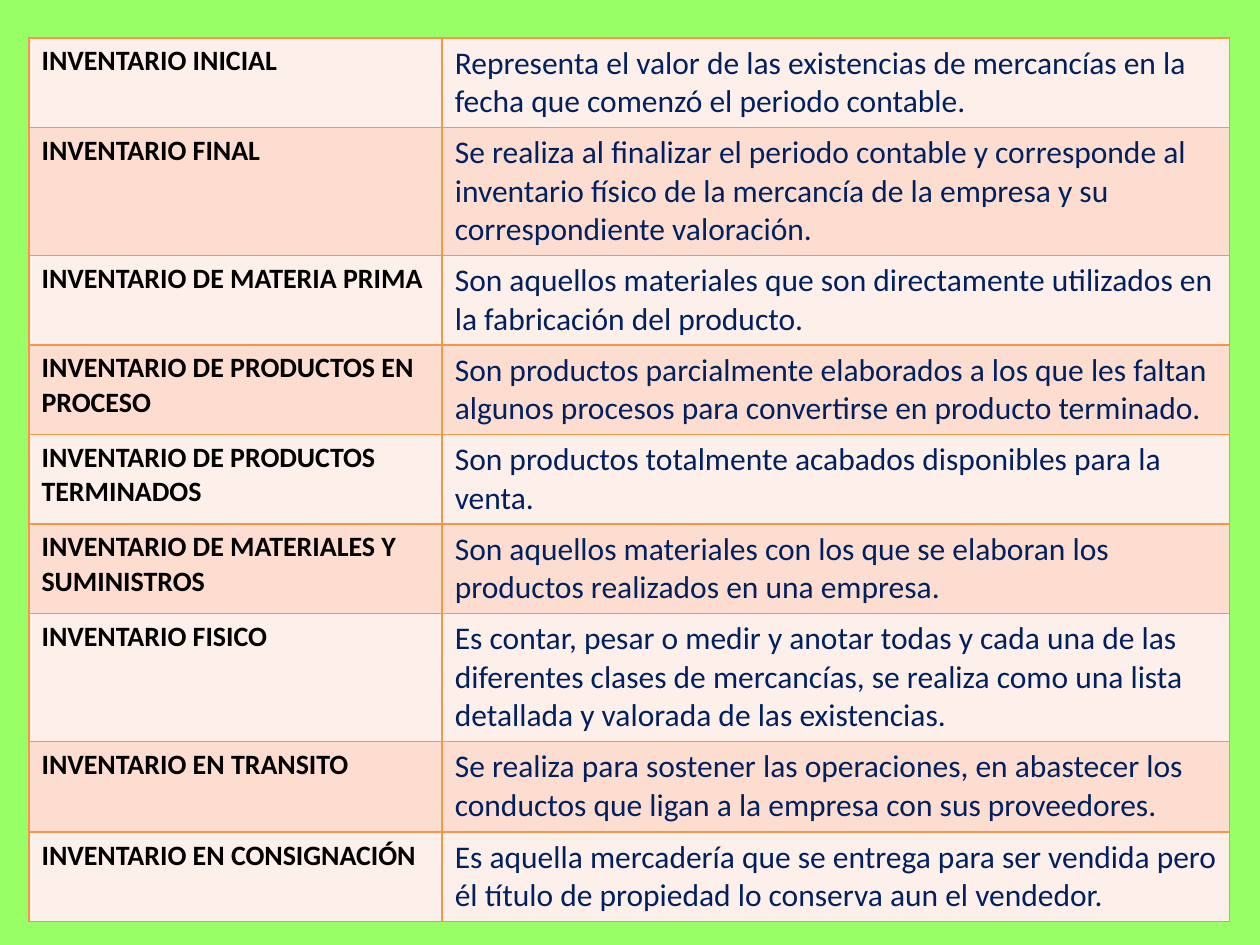
import pptx
import pptx.util
import pptx.dml.color
import pptx.oxml
import pptx.oxml.ns
from pptx.util import Inches

# Content: term, definition, row height in inches
INVENTORIES = [
    ("INVENTARIO INICIAL",
     "Representa el valor de las existencias de mercancías en la fecha que comenzó el periodo contable.", 0.66),
    ("INVENTARIO FINAL",
     "Se realiza al finalizar el periodo contable y corresponde al inventario físico de la mercancía "
     "de la empresa y su correspondiente valoración.", 0.94),
    ("INVENTARIO DE MATERIA PRIMA",
     "Son aquellos materiales que son directamente utilizados en la fabricación del producto.", 0.66),
    ("INVENTARIO DE PRODUCTOS EN PROCESO",
     "Son productos parcialmente elaborados a los que les faltan algunos procesos para convertirse "
     "en producto terminado.", 0.66),
    ("INVENTARIO DE PRODUCTOS TERMINADOS",
     "Son productos totalmente acabados disponibles para la venta.", 0.66),
    ("INVENTARIO DE MATERIALES Y SUMINISTROS",
     "Son aquellos materiales con los que se elaboran los productos realizados en una empresa.", 0.66),
    ("INVENTARIO FISICO",
     "Es contar, pesar o medir y anotar todas y cada una de las diferentes clases de mercancías, "
     "se realiza como una lista detallada y valorada de las existencias.", 0.94),
    ("INVENTARIO EN TRANSITO",
     "Se realiza para sostener las operaciones, en abastecer los conductos que ligan a la empresa "
     "con sus proveedores.", 0.72),
    ("INVENTARIO EN CONSIGNACIÓN",
     "Es aquella mercadería que se entrega para ser vendida pero él título de propiedad lo conserva "
     "aun el vendedor.", 0.66),
]
COLUMN_WIDTHS = (3.28, 6.25)
COLORS = {"background": "99FF66", "border": "F79646", "light": "FDEFE9", "dark": "FCDDCF",
          "term": "000000", "definition": "002060"}
FONT = "Calibri"


def rgb(name):
    return pptx.dml.color.RGBColor.from_string(COLORS[name])


def write(cell, text, size, color, bold=False):
    run = cell.text_frame.paragraphs[0].add_run()
    run.text = text
    run.font.name = FONT
    run.font.size = pptx.util.Pt(size)
    run.font.bold = bold
    run.font.color.rgb = rgb(color)


def style_cell(cell, fill):
    cell.fill.solid()
    cell.fill.fore_color.rgb = rgb(fill)
    properties = cell._tc.get_or_add_tcPr()
    # Border lines come before the fill in the cell properties
    for position, side in enumerate(("lnL", "lnR", "lnT", "lnB")):
        properties.insert(position, pptx.oxml.parse_xml(
            f'<a:{side} {pptx.oxml.ns.nsdecls("a")} w="{pptx.util.Pt(1)}"><a:solidFill>'
            f'<a:srgbClr val="{COLORS["border"]}"/></a:solidFill></a:{side}>'))


def main():
    deck = pptx.Presentation()
    deck.slide_width, deck.slide_height = Inches(10), Inches(7.5)
    slide = deck.slides.add_slide(deck.slide_layouts[6])
    slide.background.fill.solid()
    slide.background.fill.fore_color.rgb = rgb("background")

    # Table of inventory kinds
    inventory_table = slide.shapes.add_table(
        len(INVENTORIES), len(COLUMN_WIDTHS), Inches(0.23), Inches(0.3),
        Inches(sum(COLUMN_WIDTHS)), Inches(sum(row[2] for row in INVENTORIES))).table
    inventory_table.first_row = False
    for column, width in zip(inventory_table.columns, COLUMN_WIDTHS):
        column.width = Inches(width)

    # Rows in alternating fills
    for index, (term, definition, height) in enumerate(INVENTORIES):
        row = inventory_table.rows[index]
        row.height = Inches(height)
        term_cell, definition_cell = row.cells
        write(term_cell, term, size=16, color="term", bold=True)
        write(definition_cell, definition, size=18, color="definition")
        for cell in row.cells:
            style_cell(cell, "dark" if index % 2 else "light")

    deck.save("out.pptx")


if __name__ == "__main__":
    main()
